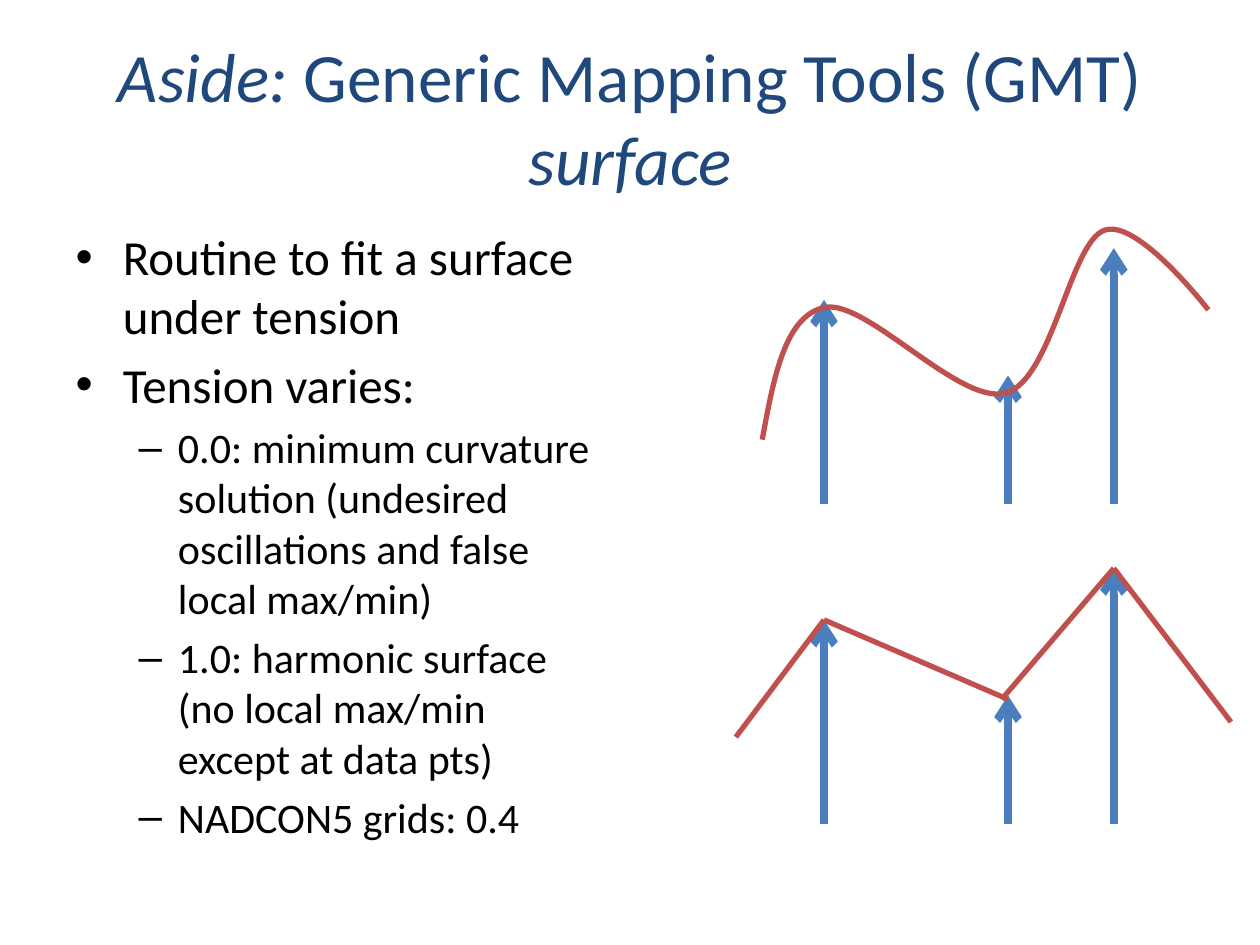
from lxml import etree
from pptx import Presentation
from pptx.dml.color import RGBColor
from pptx.enum.shapes import MSO_CONNECTOR
from pptx.enum.text import MSO_ANCHOR, MSO_AUTO_SIZE, PP_ALIGN
from pptx.oxml.ns import qn
from pptx.util import Inches, Pt

STRAIGHT = MSO_CONNECTOR.STRAIGHT
MIDDLE = MSO_ANCHOR.MIDDLE
NO_FIT = MSO_AUTO_SIZE.NONE
CENTER = PP_ALIGN.CENTER

NAVY = RGBColor(0x1F, 0x49, 0x7D)
BLACK = RGBColor(0x00, 0x00, 0x00)
BLUE = RGBColor(0x4B, 0x7E, 0xBC)
RED = RGBColor(0xC0, 0x50, 0x4D)

TITLE = [("Aside: ", True), ("Generic Mapping Tools (GMT) ", False), ("surface", True)]
BULLETS = [
    (0, "Routine to fit a surface under tension"),
    (0, "Tension varies:"),
    (1, "0.0: minimum curvature solution (undesired oscillations and false local max/min)"),
    (1, "1.0: harmonic surface (no local max/min except at data pts)"),
    (1, "NADCON5 grids: 0.4"),
]
LEVEL_SIZES = [28, 24]

# Data points: x and height of each arrow, and the base line of each diagram
DATA_POINTS = [(6.54, 1.62), (8, 1.02), (8.84, 2.03)]
BASE_LINES = [4, 6.54]

# Smooth surface: start, then (control, control, end) for each piece
CURVE_START = (6.05, 3.49)
CURVE_PIECES = [
    [(6.14, 3), (6.23, 2.5), (6.55, 2.44)],
    [(6.88, 2.38), (7.62, 3.22), (7.98, 3.12)],
    [(8.35, 3.02), (8.49, 1.94), (8.76, 1.83)],
    [(9.02, 1.72), (9.59, 2.46), (9.59, 2.46)],
]
# Harmonic surface: straight pieces between data points
STRAIGHT_PIECES = [
    ((5.84, 5.85), (6.54, 4.92)),
    ((8, 5.55), (6.54, 4.92)),
    ((7.95, 5.55), (8.84, 4.51)),
    ((9.77, 5.73), (8.84, 4.51)),
]


def add_span(para, text, size, color, italic=False, name="Calibri"):
    span = para.add_run()
    span.text = text
    span.font.name = name
    span.font.size = Pt(size)
    span.font.color.rgb = color
    span.font.italic = italic


class SlideBuilder:
    def __init__(self, page):
        self.page = page

    def place(self, box, left, top, width, height):
        box.left, box.top = Inches(left), Inches(top)
        box.width, box.height = Inches(width), Inches(height)
        box.text_frame.word_wrap = True
        box.text_frame.auto_size = NO_FIT

    def title(self, spans):
        box = self.page.shapes.title
        self.place(box, 0.5, 0.3, 9, 1.25)
        box.text_frame.vertical_anchor = MIDDLE
        para = box.text_frame.paragraphs[0]
        para.alignment = CENTER
        for text, italic in spans:
            add_span(para, text, 39.6, NAVY, italic)

    def bullets(self, items):
        box = self.page.placeholders[1]
        self.place(box, 0.5, 1.75, 4.42, 4.95)
        frame = box.text_frame
        for index, (level, text) in enumerate(items):
            para = frame.add_paragraph() if index else frame.paragraphs[0]
            para.level = level
            if index == 0:
                para.space_before = Pt(0)
            add_span(para, text, LEVEL_SIZES[level], BLACK)

    def line(self, shapes, start, end, color, width, arrow=False):
        ends = [Inches(value) for value in (*start, *end)]
        connector = shapes.add_connector(STRAIGHT, *ends)
        connector.line.color.rgb = color
        connector.line.width = Pt(width)
        properties = connector._element.spPr
        if arrow:
            etree.SubElement(properties.find(qn("a:ln")), qn("a:tailEnd"), type="arrow")
        etree.SubElement(properties, qn("a:effectLst"))

    def arrows(self, base):
        group = self.page.shapes.add_group_shape()
        for x, height in DATA_POINTS:
            self.line(group.shapes, (x, base), (x, base - height), BLUE, 4.5, arrow=True)

    def curve(self, start, pieces, color, width):
        builder = self.page.shapes.build_freeform(Inches(start[0]), Inches(start[1]))
        builder.add_line_segments(
            [(Inches(x), Inches(y)) for *_, (x, y) in pieces], close=False)
        shape = builder.convert_to_shape()
        shape.shadow.inherit = False
        shape.fill.background()
        shape.line.color.rgb = color
        shape.line.width = Pt(width)
        # Turn each straight segment into a Bezier segment
        segments = list(shape._element.iter(qn("a:lnTo")))
        for segment, points in zip(segments, pieces):
            bezier = etree.Element(qn("a:cubicBezTo"))
            for x, y in points:
                etree.SubElement(bezier, qn("a:pt"), x=str(Inches(x) - shape.left),
                                 y=str(Inches(y) - shape.top))
            segment.getparent().replace(segment, bezier)


def main():
    deck = Presentation()
    deck.slide_width, deck.slide_height = Inches(10), Inches(7.5)
    page = deck.slides.add_slide(deck.slide_layouts[1])
    slide = SlideBuilder(page)

    # Text
    slide.title(TITLE)
    slide.bullets(BULLETS)

    # Data arrows, then the two fitted surfaces
    for base in BASE_LINES:
        slide.arrows(base)
    slide.curve(CURVE_START, CURVE_PIECES, RED, 3)
    for start, end in STRAIGHT_PIECES:
        slide.line(page.shapes, start, end, RED, 3)

    deck.save("out.pptx")


if __name__ == "__main__":
    main()
